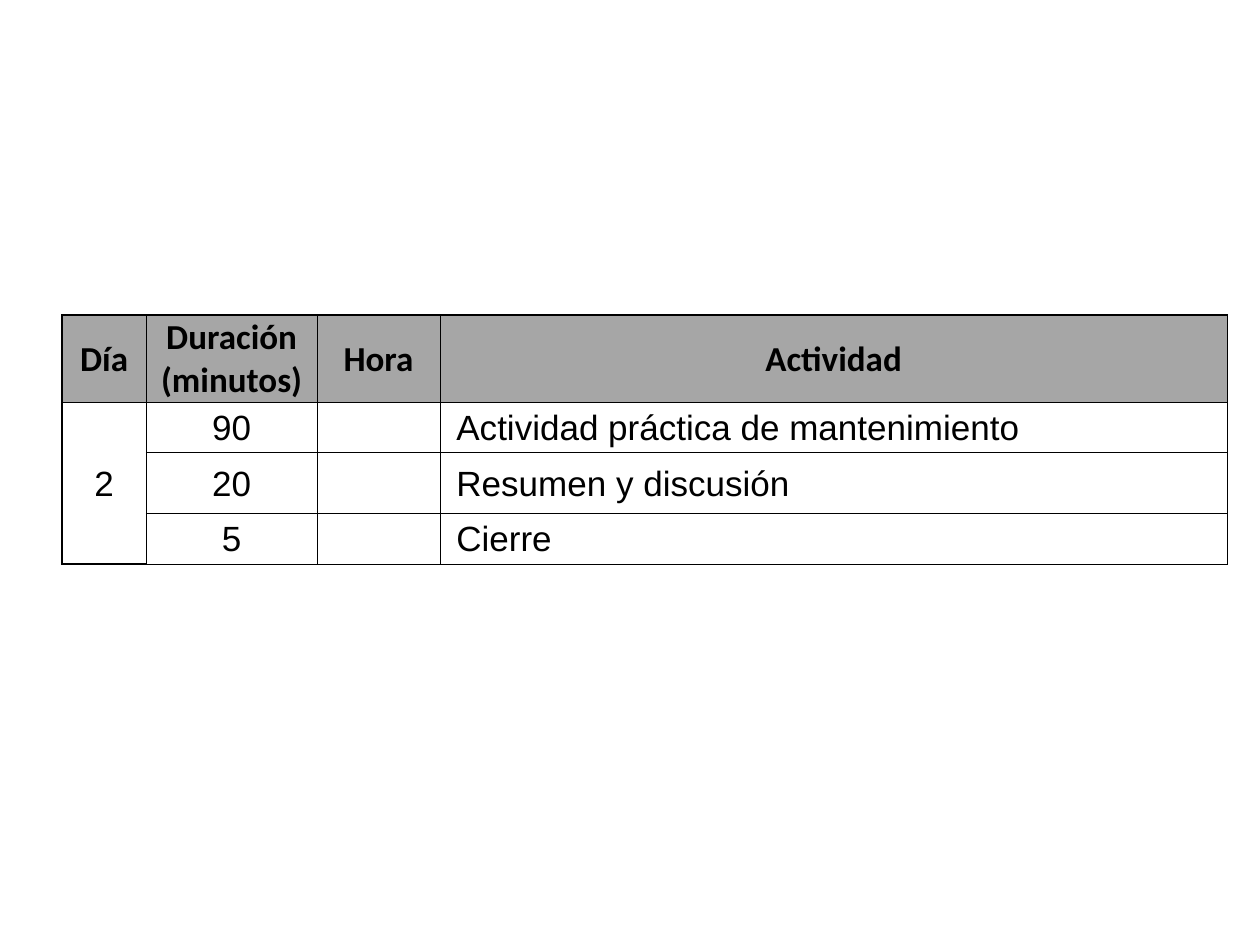
from lxml import etree
from pptx import Presentation
from pptx import util as u
from pptx.dml.color import RGBColor
from pptx.enum import text
from pptx.oxml.ns import qn

HEADER = ["Día", "Duración (minutos)", "Hora", "Actividad"]
ACTIVITIES = [
    ["2", "90", "", "Actividad práctica de mantenimiento"],
    ["", "20", "", "Resumen y discusión"],
    ["", "5", "", "Cierre"],
]
COLUMN_WIDTHS = [1.7, 3.44, 2.48, 15.87]
ROW_HEIGHTS = [1.71, 1.02, 1.22, 1.02]
CELL_FORMAT = {
    "margin_left": u.Cm(0.03),
    "margin_right": u.Cm(0.03),
    "margin_top": u.Cm(0.03),
    "margin_bottom": 0,
    "vertical_anchor": text.MSO_ANCHOR.MIDDLE,
}
HEADER_FONT = {"name": "Calibri", "size": u.Pt(20), "bold": True}
BODY_FONT = {"name": "Arial", "size": u.Pt(20), "bold": False}


def color(value):
    """Turn a hex string into a colour."""
    return RGBColor.from_string(value)


def set_format(target, values):
    """Set each attribute of the target from a dict."""
    for name, value in values.items():
        setattr(target, name, value)


def add_borders(cell, widths, line_color="000000"):
    """Draw the cell's borders with widths in points, keyed by side."""
    properties = cell._tc.get_or_add_tcPr()
    for position, side in enumerate("LRTB"):
        line = etree.Element(qn(f"a:ln{side}"), w=str(u.Pt(widths[side])))
        fill = etree.SubElement(line, qn("a:solidFill"))
        etree.SubElement(fill, qn("a:srgbClr"), val=line_color)
        properties.insert(position, line)


def fill_cell(cell, words, row, column):
    """Write and format one schedule cell according to its place."""
    is_header = row == 0
    last_column = len(HEADER) - 1
    set_format(cell, CELL_FORMAT)
    if is_header:
        cell.fill.solid()
        cell.fill.fore_color.rgb = color("A6A6A6")
    else:
        cell.fill.background()
    add_borders(cell, {
        "L": 1 if column == 0 else 0.5,
        "R": 1 if column == last_column else 0.5,
        "T": 1 if is_header else 0.5,
        "B": 1 if column == 0 and not is_header else 0.5,
    })
    para = cell.text_frame.paragraphs[0]
    if column == last_column and not is_header:
        para.alignment = text.PP_ALIGN.LEFT
        para._p.get_or_add_pPr().set("marL", str(u.Cm(0.3)))
    else:
        para.alignment = text.PP_ALIGN.CENTER
    if words:
        span = para.add_run()
        span.text = words
        set_format(span.font, HEADER_FONT if is_header else BODY_FONT)
        span.font.color.rgb = color("000000")


def add_schedule(page, left, top):
    """Place the schedule table with its corner at left and top."""
    rows = [HEADER, *ACTIVITIES]
    table = page.shapes.add_table(
        len(rows), len(HEADER), u.Cm(left), u.Cm(top),
        u.Cm(sum(COLUMN_WIDTHS)), u.Cm(sum(ROW_HEIGHTS))).table
    set_format(table, {"first_row": False, "horz_banding": False})
    for column, width in zip(table.columns, COLUMN_WIDTHS):
        column.width = u.Cm(width)
    for row, height in zip(table.rows, ROW_HEIGHTS):
        row.height = u.Cm(height)
    for row, entries in enumerate(rows):
        for column, words in enumerate(entries):
            fill_cell(table.cell(row, column), words, row, column)
    table.cell(1, 0).merge(table.cell(len(ACTIVITIES), 0))


def main():
    """Build the schedule slide and save it."""
    deck = Presentation()
    set_format(deck, {"slide_width": u.Cm(25.4), "slide_height": u.Cm(19.05)})
    page = deck.slides.add_slide(deck.slide_layouts.get_by_name("Blank"))
    add_schedule(page, 1.25, 6.35)
    deck.save("out.pptx")


if __name__ == "__main__":
    main()
